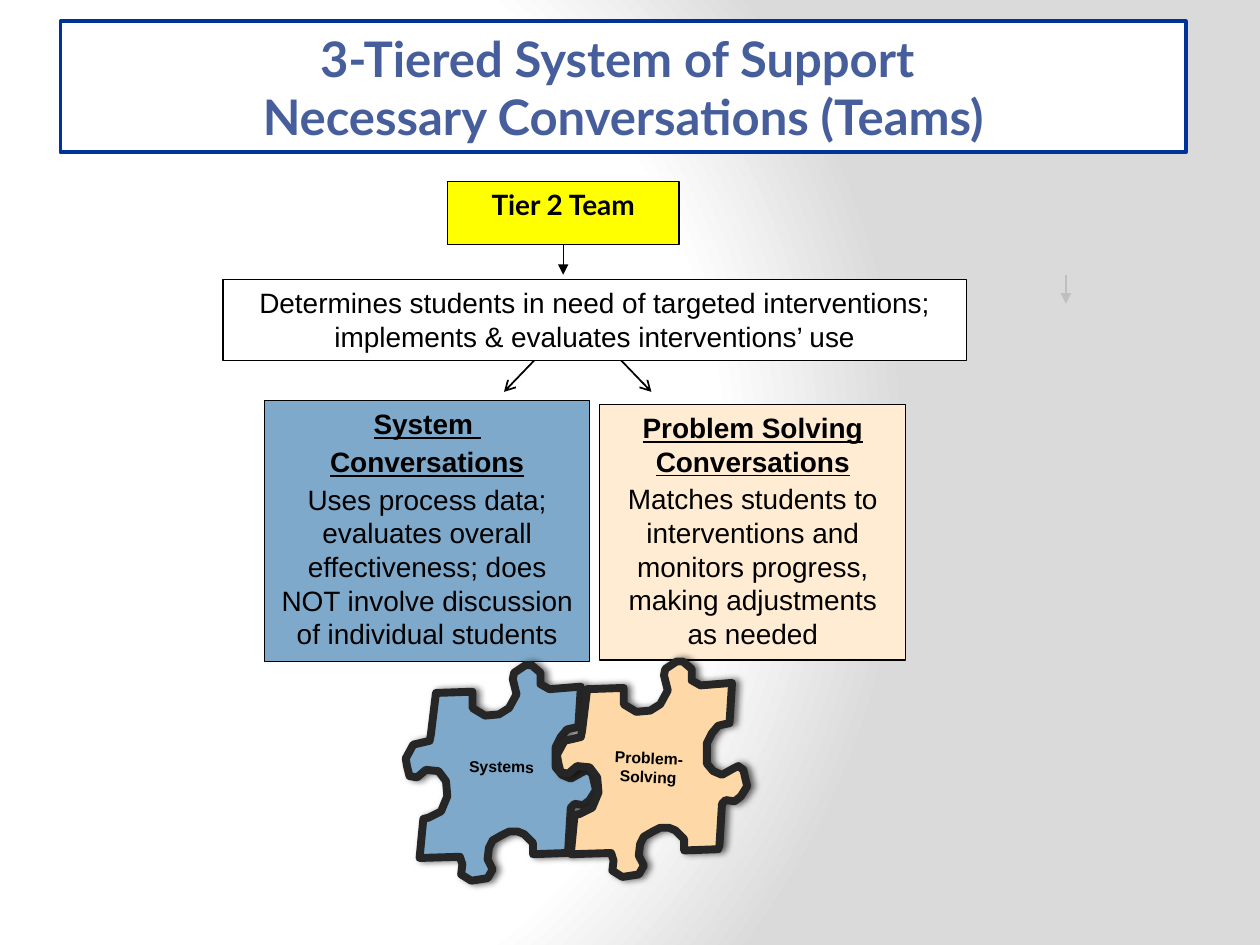
from dataclasses import dataclass

from lxml.etree import SubElement
from pptx import Presentation
from pptx.dml.color import RGBColor
from pptx.enum.shapes import MSO_CONNECTOR, MSO_SHAPE
from pptx.enum.text import MSO_ANCHOR, MSO_AUTO_SIZE, PP_ALIGN
from pptx.oxml import parse_xml
from pptx.oxml.ns import nsdecls, qn
from pptx.util import Pt

PX = 9144  # 100 px to the inch


@dataclass(frozen=True)
class Theme:
    ink: str = "000000"
    paper: str = "FFFFFF"
    shade: str = "DADADA"
    navy: str = "003399"
    slate: str = "465E9C"
    yellow: str = "FFFF00"
    blue: str = "7EA9CA"
    cream: str = "FFECD3"
    peach: str = "FED9A7"
    edge: str = "262626"
    pale: str = "BFBFBF"
    head: str = "Lato"
    body: str = "Arial"
    big: int = 28
    mid: int = 16
    small: int = 9


def rgb(code):
    return RGBColor.from_string(code)


def put(item, vals):
    """Set each attribute named in vals."""
    for name, val in vals.items():
        setattr(item, name, val)


class Deck:
    def __init__(self, theme):
        self.theme = theme
        self.file = Presentation()
        put(self.file, {"slide_width": 1000 * PX, "slide_height": 750 * PX})
        self.slide = self.file.slides.add_slide(self.file.slide_layouts[5])
        self.shapes = self.slide.shapes

    def ground(self):
        """Fill the background with a round gradient."""
        tones = ((0, self.theme.paper), (75, self.theme.paper), (100, self.theme.shade))
        stops = "".join(
            f'<a:gs pos="{at * 1000}"><a:srgbClr val="{tone}"/></a:gs>' for at, tone in tones
        )
        self.slide.element.cSld.insert(0, parse_xml(
            f'<p:bg {nsdecls("p", "a")}><p:bgPr><a:gradFill rotWithShape="1">'
            f'<a:gsLst>{stops}</a:gsLst><a:path path="circle">'
            '<a:fillToRect l="20000" t="50000" r="100000" b="50000"/></a:path>'
            '</a:gradFill><a:effectLst/></p:bgPr></p:bg>'
        ))

    def paint(self, shape, fill, line, width):
        shape.fill.solid()
        shape.fill.fore_color.rgb = rgb(fill)
        shape.line.color.rgb = rgb(line)
        shape.line.width = Pt(width)

    def label(self, shape, rows, gap=0, tone=None, **font):
        """Add rows of (text, extra font values) as centred paragraphs."""
        frame = shape.text_frame
        put(frame, {"word_wrap": True, "auto_size": MSO_AUTO_SIZE.NONE,
                    "vertical_anchor": MSO_ANCHOR.TOP})
        for i, (text, extra) in enumerate(rows):
            para = frame.add_paragraph() if i else frame.paragraphs[0]
            put(para, {"alignment": PP_ALIGN.CENTER, "space_before": Pt(gap)})
            run = para.add_run()
            run.text = text
            put(run.font, {**font, **extra})
            run.font.color.rgb = rgb(tone or self.theme.ink)

    def title(self, box, lines):
        shape = self.shapes.title
        put(shape, dict(zip(("left", "top", "width", "height"), (v * PX for v in box))))
        self.paint(shape, self.theme.paper, self.theme.navy, 2.25)
        self.label(shape, [(line, {}) for line in lines], tone=self.theme.slate,
                   name=self.theme.head, size=Pt(self.theme.big), bold=True)
        shape.text_frame.vertical_anchor = MSO_ANCHOR.MIDDLE

    def box(self, box, fill, rows, face=None):
        shape = self.shapes.add_shape(MSO_SHAPE.RECTANGLE, *(v * PX for v in box))
        shape.shadow.inherit = False
        self.paint(shape, fill, self.theme.ink, 0.75)
        self.label(shape, rows, gap=2.4, name=face or self.theme.body,
                   size=Pt(self.theme.mid))
        return shape

    def arrow(self, start, end, tone, width=0.75, tip="triangle", source=None):
        line = self.shapes.add_connector(
            MSO_CONNECTOR.STRAIGHT, *(v * PX for v in (*start, *end)))
        if source is not None:
            line.begin_connect(source, 2)
        line.line.color.rgb = rgb(tone)
        line.line.width = Pt(width)
        props = line.element.spPr
        SubElement(props.find(qn("a:ln")), qn("a:tailEnd"), type=tip)
        SubElement(props, qn("a:effectLst"))

    def piece(self, dots, shift, fill, text, box, turn):
        """Group a jigsaw piece with its label."""
        dx, dy = shift
        first, *rest = [(x + dx, y + dy) for x, y in dots]
        pen = self.shapes.build_freeform(*first, scale=PX)
        pen.add_line_segments(rest, close=True)
        shape = pen.convert_to_shape()
        self.paint(shape, fill, self.theme.edge, 4.5)
        shape.shadow.inherit = False
        cast = SubElement(shape.element.spPr.find(qn("a:effectLst")), qn("a:outerShdw"),
                          blurRad=str(Pt(4)), dist=str(Pt(2)), dir="0")
        tint = SubElement(cast, qn("a:srgbClr"), val=self.theme.ink)
        SubElement(tint, qn("a:alpha"), val="60000")
        note = self.shapes.add_textbox(*(v * PX for v in box))
        note.rotation = turn
        self.label(note, [(text, {})], name=self.theme.body,
                   size=Pt(self.theme.small), bold=True)
        self.shapes.add_group_shape([shape, note])


JIGSAW = (
    (461, 545), (459, 577), (454, 578), (450, 579), (445, 585), (441, 593), (441, 599),
    (441, 609), (446, 615), (453, 618), (462, 613), (466, 611), (470, 614), (473, 627),
    (468, 635), (463, 639), (456, 638), (453, 641), (451, 674), (450, 677), (423, 678),
    (423, 669), (416, 662), (411, 660), (404, 660), (398, 663), (391, 667), (388, 673),
    (387, 682), (391, 690), (387, 697), (374, 699), (366, 694), (367, 686), (365, 680),
    (333, 681), (336, 650), (340, 649), (350, 644), (355, 632), (354, 620), (348, 612),
    (338, 611), (331, 617), (325, 616), (323, 608), (322, 602), (328, 591), (341, 588),
    (342, 583), (346, 550), (375, 549), (375, 562), (385, 568), (396, 567), (404, 562),
    (410, 551), (407, 539), (408, 534), (417, 528), (422, 528), (429, 534), (429, 543),
    (436, 547),
)


def main():
    look = Theme()
    deck = Deck(look)
    head = {"bold": True, "underline": True}
    deck.ground()
    deck.title((48, 17, 893, 104),
               ("3-Tiered System of Support ", "Necessary Conversations (Teams)"))
    team = deck.box((355, 144, 184, 50), look.yellow,
                    [("Tier 2 Team", {"bold": True})], look.head)
    deck.box((210, 318, 258, 207), look.blue, [
        ("System ", head),
        ("Conversations", head),
        ("Uses process data; evaluates overall effectiveness; does NOT involve "
         "discussion of individual students", {}),
    ])
    deck.box((476, 321, 243, 203), look.cream, [
        ("Problem Solving Conversations", head),
        ("Matches students to interventions and monitors progress, making "
         "adjustments as needed", {}),
    ])
    deck.arrow((846, 218), (846, 241), look.pale)
    deck.piece(JIGSAW, (0, 0), look.blue, "Systems", (355, 596, 86, 35), 0.8)
    deck.piece(JIGSAW, (120, -3), look.peach, "Problem-Solving", (472, 589, 85, 56), 2.3)
    for start, end in ((425, 400), (492, 517)):
        deck.arrow((start, 285), (end, 311), look.ink, 1, "arrow")
    deck.box((177, 222, 590, 64), look.paper, [
        ("Determines students in need of targeted interventions; implements & "
         "evaluates interventions’ use", {}),
    ])
    deck.arrow((447, 194), (447, 218), look.ink, source=team)
    deck.file.save("out.pptx")


if __name__ == "__main__":
    main()
